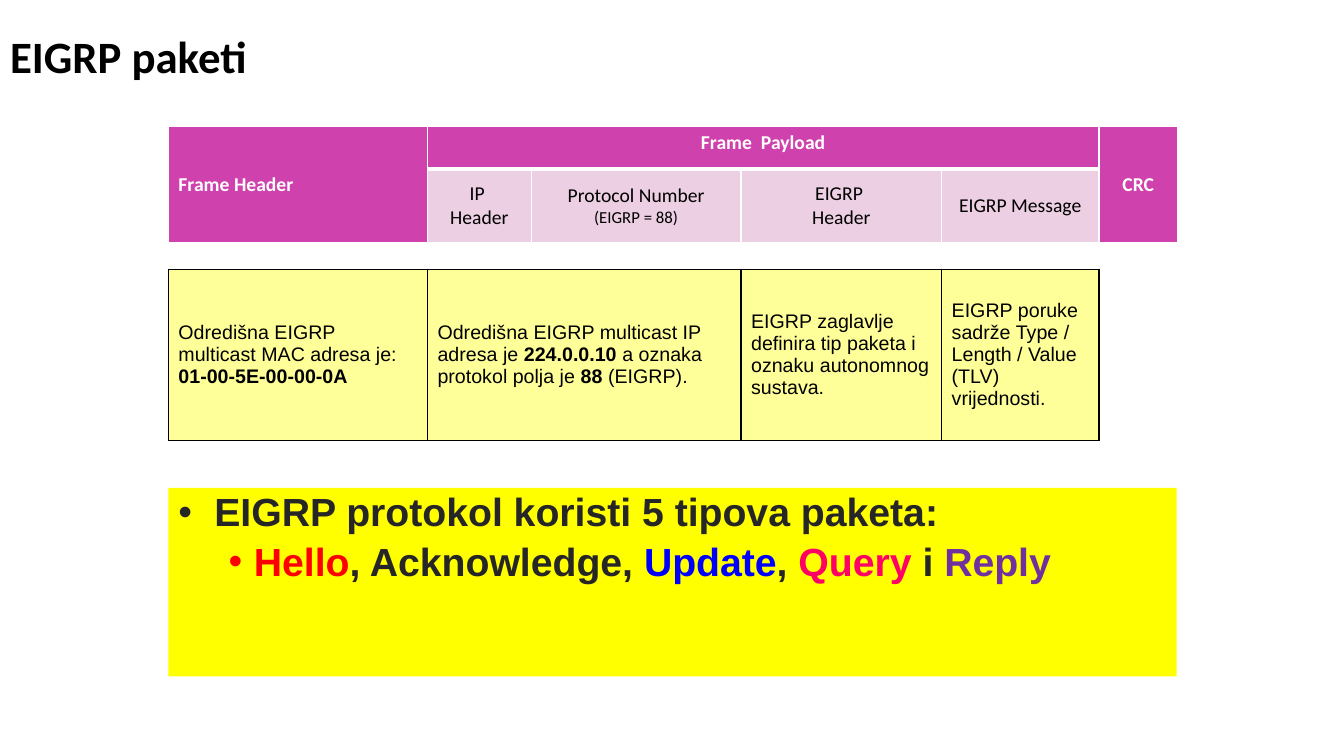
from lxml import etree
from pptx import Presentation
from pptx.dml.color import RGBColor
from pptx.enum import shapes, text
from pptx.oxml import ns
from pptx.util import Inches, Pt

C = {"black": "000000", "white": "FFFFFF", "magenta": "CF41AD", "pink": "EDCFE3",
     "cream": "FFFF99", "yellow": "FFFF00", "dark": "262626", "red": "FF0000",
     "blue": "0000FF", "rose": "FF0066", "purple": "7030A0"}


def add_run(p, words, size, font, color, bold=False):
    r = p.add_run()
    r.text = words
    r.font.size = Pt(size)
    r.font.name = font
    r.font.bold = bold
    r.font.color.rgb = RGBColor.from_string(C[color])


def add_border(cell, side, color, width):
    ln = etree.SubElement(cell._tc.get_or_add_tcPr(), ns.qn(f"a:ln{side}"), w=str(Pt(width)))
    fill = etree.SubElement(ln, ns.qn("a:solidFill"))
    etree.SubElement(fill, ns.qn("a:srgbClr"), val=C[color])


prs = Presentation()
prs.slide_width, prs.slide_height = Inches(13.33), Inches(7.5)
s = prs.slides.add_slide(prs.slide_layouts[5])

title = s.shapes.title
title.left, title.top, title.width, title.height = Inches(0), Inches(0), Inches(9.92), Inches(1.17)
tf = title.text_frame
tf.vertical_anchor = text.MSO_ANCHOR.MIDDLE
p = tf.paragraphs[0]
p.alignment = text.PP_ALIGN.LEFT
p.line_spacing = 0.9
add_run(p, "EIGRP paketi", 32, "Calibri", "black", True)

sp = s.shapes.add_shape(shapes.MSO_SHAPE.RECTANGLE, Inches(1.67), Inches(4.84), Inches(10), Inches(1.87))
sp.shadow.inherit = False
sp.fill.solid()
sp.fill.fore_color.rgb = RGBColor.from_string(C["yellow"])
sp.line.fill.background()
tf = sp.text_frame
tf.word_wrap = True
tf.vertical_anchor = text.MSO_ANCHOR.TOP
bullets = [
    (0.25, [(" EIGRP protokol koristi 5 tipova paketa:", "dark")]),
    (0.75, [("Hello", "red"), (", Acknowledge, ", "dark"), ("Update", "blue"), (", ", "dark"),
            ("Query", "rose"), (" i ", "dark"), ("Reply", "purple")]),
]
for level, (indent, runs) in enumerate(bullets):
    p = tf.add_paragraph() if level else tf.paragraphs[0]
    p.level = level
    p.alignment = text.PP_ALIGN.LEFT
    p.line_spacing = 0.9
    p.space_before = Pt(5 * level)
    pPr = p._p.get_or_add_pPr()
    pPr.set("marL", str(Inches(indent)))
    pPr.set("indent", str(Inches(-0.25)))
    etree.SubElement(pPr, ns.qn("a:buFont"), typeface="Arial")
    etree.SubElement(pPr, ns.qn("a:buChar"), char="•")
    for words, color in runs:
        add_run(p, words, 28, "Arial", color, True)

widths = [2.57, 1.03, 2.08, 1.99, 1.56, 0.78]
heights = [0.43, 0.73, 0.26, 1.7]
table = s.shapes.add_table(len(heights), len(widths), Inches(1.67), Inches(1.25),
                           Inches(10), Inches(3.12)).table
table.first_row = table.horz_banding = False
for column, width in zip(table.columns, widths):
    column.width = Inches(width)
for row, height in zip(table.rows, heights):
    row.height = Inches(height)

fills = ["magenta", "pink", "white", "cream"]
for i in range(len(heights)):
    for j in range(len(widths)):
        cell = table.cell(i, j)
        last = j == len(widths) - 1
        edges = {side: ("white", 1) for side in "LRTB"}
        if i < 2 and 0 < j and not last:
            edges["B" if i == 0 else "T"] = ("white", 3)
        if i == 2 and not last:
            edges["B"] = ("black", 1)
        if i == 3:
            edges = {side: ("black", 1) for side in "LRTB"} if not last else edges | {"L": ("black", 1)}
        for side, (color, width) in edges.items():
            add_border(cell, side, color, width)
        fill = fills[i]
        if i == 1 and (j == 0 or last):
            fill = "magenta"
        if i == 3 and last:
            fill = "white"
        cell.fill.solid()
        cell.fill.fore_color.rgb = RGBColor.from_string(C[fill])

for first, end in [((0, 0), (1, 0)), ((0, 1), (0, 4)), ((0, 5), (1, 5)),
                   ((2, 1), (2, 2)), ((3, 1), (3, 2))]:
    table.cell(*first).merge(table.cell(*end))

labels = {
    (0, 0): [[("Frame Header", 14, True)]],
    (0, 1): [[("Frame  Payload", 14, True)]],
    (0, 5): [[("CRC", 14, True)]],
    (1, 1): [[("IP ", 14, False)], [("Header", 14, False)]],
    (1, 2): [[("Protocol Number", 14, False)], [("(EIGRP = 88)", 12, False)]],
    (1, 3): [[("EIGRP ", 14, False)], [("Header", 14, False)]],
    (1, 4): [[("EIGRP Message", 14, False)]],
    (3, 0): [[("Odredišna EIGRP multicast MAC adresa je:", 14, False)],
             [("01-00-5E-00-00-0A", 14, True)]],
    (3, 1): [[("Odredišna EIGRP multicast IP adresa je ", 14, False), ("224.0.0.10 ", 14, True),
              ("a oznaka protokol polja je ", 14, False), ("88 ", 14, True),
              ("(EIGRP).", 14, False)]],
    (3, 3): [[("EIGRP zaglavlje definira tip paketa i oznaku autonomnog sustava.", 14, False)]],
    (3, 4): [[("EIGRP poruke sadrže Type / Length / Value (TLV) vrijednosti.", 14, False)]],
}
for (i, j), paragraphs in labels.items():
    cell = table.cell(i, j)
    cell.vertical_anchor = text.MSO_ANCHOR.TOP if (i, j) == (0, 1) else text.MSO_ANCHOR.MIDDLE
    tf = cell.text_frame
    for n, runs in enumerate(paragraphs):
        p = tf.add_paragraph() if n else tf.paragraphs[0]
        p.alignment = text.PP_ALIGN.CENTER if i < 2 and j else text.PP_ALIGN.LEFT
        for words, size, bold in runs:
            color = "white" if fills[i] == "magenta" else "black"
            add_run(p, words, size, "Arial" if i == 3 else "Calibri", color, bold)

for cell in table.iter_cells():
    if not cell.text_frame.text:
        cell.margin_top = cell.margin_bottom = Inches(0)
        etree.SubElement(cell.text_frame.paragraphs[0]._p, ns.qn("a:endParaRPr"), sz="800")

prs.save("out.pptx")
